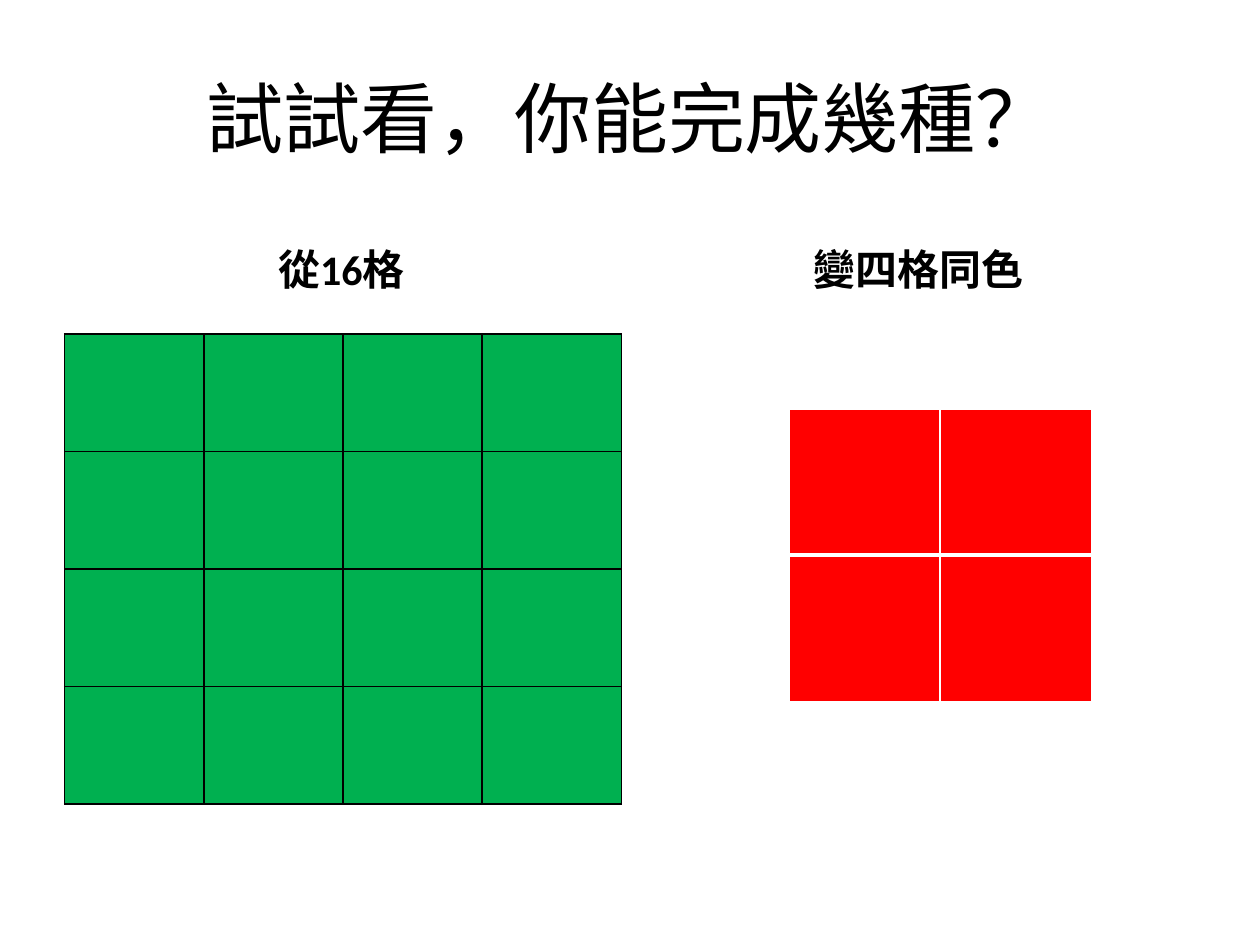
from lxml import etree
from pptx import Presentation, util as u
from pptx.dml.color import RGBColor
from pptx.enum import text
from pptx.oxml.ns import qn

Pt = u.Pt


def paint(target, colour):
    """Give a fill or a font a solid colour from a hex string."""
    if hasattr(target, "solid"):
        target.solid()
        target.fore_color.rgb = RGBColor.from_string(colour)
    else:
        target.color.rgb = RGBColor.from_string(colour)


def add_text(page, words, *, left, top, width, height, size, bold=False,
             anchor=text.MSO_ANCHOR.MIDDLE, before=0):
    box = page.shapes.add_textbox(Pt(left), Pt(top), Pt(width), Pt(height))
    box.text_frame.word_wrap = True
    box.text_frame.vertical_anchor = anchor
    para = box.text_frame.paragraphs[0]
    para.alignment = text.PP_ALIGN.CENTER
    para.space_before = Pt(before)
    span = para.add_run()
    span.text = words
    span.font.name = "Calibri"
    span.font.size = Pt(size)
    span.font.bold = bold
    paint(span.font, "000000")


deck = Presentation()
deck.slide_width, deck.slide_height = Pt(720), Pt(540)
page = deck.slides.add_slide(deck.slide_layouts[6])

# Title and the two column headings
add_text(page, "試試看，你能完成幾種？", left=36, top=21.6, width=648, height=90, size=44)
for words, left in (("從16格", 36), ("變四格同色", 365.75)):
    add_text(page, words, left=left, top=120.9, width=318.25, height=50.4, size=24,
             bold=True, anchor=text.MSO_ANCHOR.BOTTOM, before=4.8)

# Square grids: count per side, place, cell size, fill, line colour, inner row line width
grids = (
    (2, 450.75, 233.6, 86.5, 83.6, "FF0000", "FFFFFF", 3),
    (4, 36.9, 190.8, 79.55, 67.2, "00B050", "000000", 1),
)
for count, left, top, width, height, fill, line, divider in grids:
    grid = page.shapes.add_table(count, count, Pt(left), Pt(top),
                                 Pt(count * width), Pt(count * height)).table
    grid.first_row = grid.horz_banding = False
    for column in grid.columns:
        column.width = Pt(width)
    for index, row in enumerate(grid.rows):
        row.height = Pt(height)
        weights = {
            "a:lnL": 1,
            "a:lnR": 1,
            "a:lnT": divider if index > 0 else 1,
            "a:lnB": divider if index < count - 1 else 1,
        }
        for cell in row.cells:
            # Borders come before the fill in the cell properties
            properties = cell._tc.get_or_add_tcPr()
            for side, weight in weights.items():
                border = etree.SubElement(properties, qn(side), w=str(Pt(weight)))
                solid = etree.SubElement(border, qn("a:solidFill"))
                etree.SubElement(solid, qn("a:srgbClr"), val=line)
            paint(cell.fill, fill)

deck.save("out.pptx")
